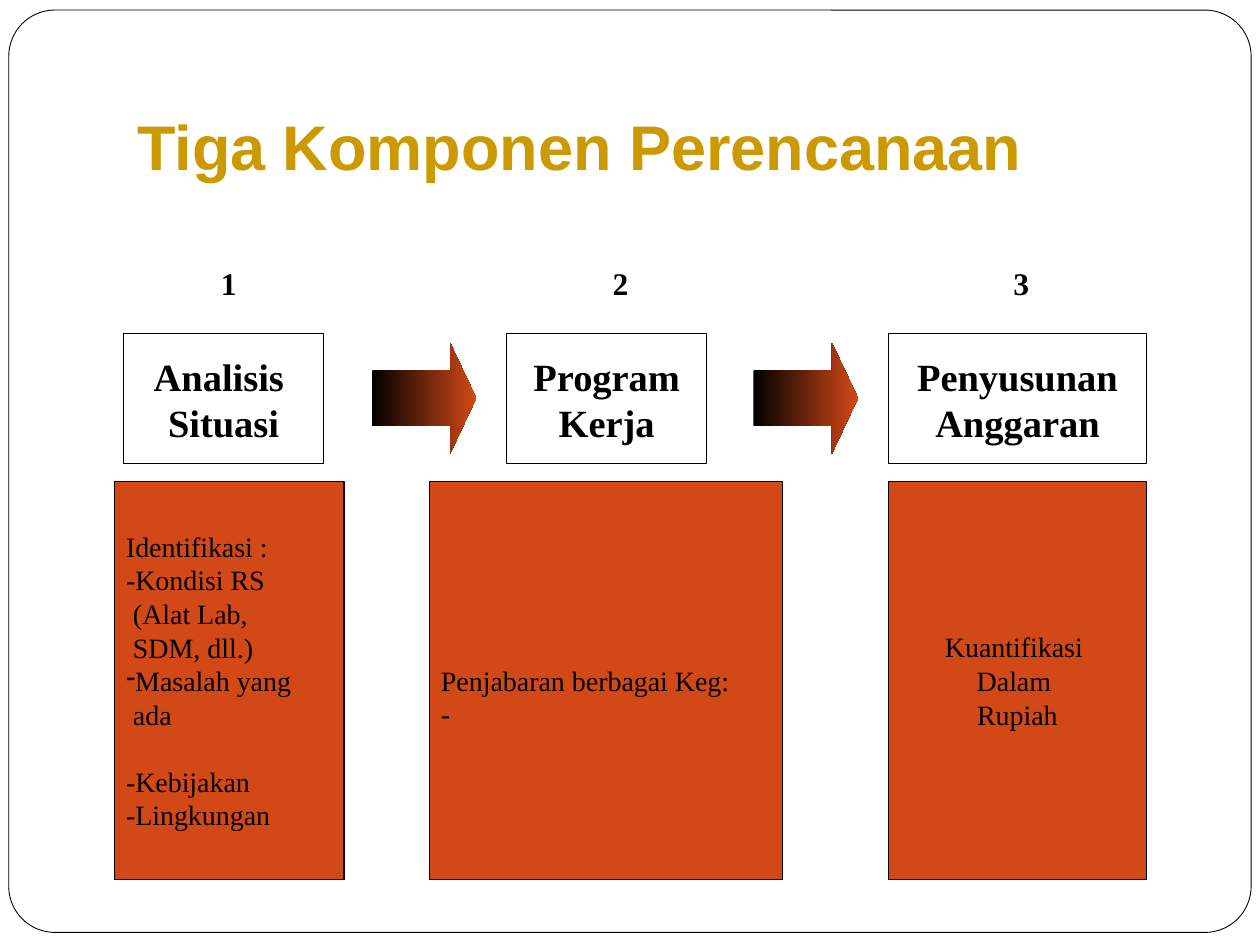
from lxml.etree import SubElement
from pptx import Presentation
from pptx.dml.color import RGBColor
from pptx.enum.shapes import MSO_SHAPE as Shape
from pptx.enum.text import MSO_ANCHOR as Anchor, PP_ALIGN as Align
from pptx.oxml.ns import qn
from pptx.util import Inches, Pt

BLACK, WHITE, RUST, GOLD = "000000", "FFFFFF", "D34817", "CC9900"
SERIF = "Times New Roman"


def rgb(code):
    """Turn a hex string into a colour."""
    return RGBColor.from_string(code)


def shape(slide, kind, box, fill=None, line=None):
    """Add a preset shape with a plain fill and outline."""
    item = slide.shapes.add_shape(kind, *map(Inches, box))
    item.shadow.inherit = False
    if fill:
        item.fill.solid()
        item.fill.fore_color.rgb = rgb(fill)
    else:
        item.fill.background()
    if line:
        item.line.color.rgb = rgb(BLACK)
        item.line.width = Pt(line)
    else:
        item.line.fill.background()
    return item


def write(item, lines, size, bold=False, align=Align.CENTER, font=SERIF,
          color=BLACK, anchor=Anchor.MIDDLE, top=0.04, low=0.04):
    """Write one paragraph for each line and return the paragraphs."""
    frame = item.text_frame
    frame.word_wrap = True
    frame.vertical_anchor = anchor
    frame.margin_left = frame.margin_right = Inches(0.09)
    frame.margin_top, frame.margin_bottom = Inches(top), Inches(low)
    for i, text in enumerate(lines):
        para = frame.add_paragraph() if i else frame.paragraphs[0]
        para.alignment = align
        run = para.add_run()
        run.text = text
        run.font.name, run.font.size, run.font.bold = font, Pt(size), bold
        run.font.color.rgb = rgb(color)
    return frame.paragraphs


def label(slide, box, lines, size, **style):
    """Add a text box holding bold lines."""
    item = slide.shapes.add_textbox(*map(Inches, box))
    write(item, lines, size, bold=True, **style)


def dash(para):
    """Give a paragraph a dash bullet."""
    props = para._p.get_or_add_pPr()
    props.set("marL", "0")
    props.set("indent", "0")
    SubElement(props, qn("a:buChar")).set("char", "-")


def head(slide, left, width, lines):
    """Add the outlined box that names a component."""
    item = shape(slide, Shape.RECTANGLE, (left, 2.65, width, 1.03), line=0.75)
    write(item, lines, 22, bold=True)


def detail(slide, left, width, lines, **style):
    """Add the filled box that describes a component."""
    box = (left, 3.82, width, 3.16)
    item = shape(slide, Shape.RECTANGLE, box, RUST, 0.75)
    return write(item, lines, 16, **style)


def arrow(slide, left):
    """Add a gradient arrow between two components."""
    item = shape(slide, Shape.RIGHT_ARROW, (left, 2.72, 0.83, 0.88))
    item.adjustments[0], item.adjustments[1] = 0.5, 0.25
    item.fill.gradient()
    item.fill.gradient_angle = 0
    for stop, place, code in zip(item.fill.gradient_stops, (0, 1), (BLACK, RUST)):
        stop.position = place
        stop.color.rgb = rgb(code)


def main():
    """Build and save the slide."""
    deck = Presentation()
    deck.slide_width, deck.slide_height = Inches(10), Inches(7.5)
    slide = deck.slides.add_slide(deck.slide_layouts[6])

    frame = shape(slide, Shape.ROUNDED_RECTANGLE, (0.07, 0.08, 9.86, 7.32), WHITE, 0.5)
    frame.adjustments[0] = 0.05
    label(slide, (1, 0.3, 8.5, 1.25), ["Tiga Komponen Perencanaan"], 36,
          align=Align.LEFT, font="Arial", color=GOLD, anchor=Anchor.BOTTOM, low=0.1)

    for num, left in enumerate((1.59, 4.7, 7.88), 1):
        label(slide, (left, 1.99, 0.45, 0.51), [str(num)], 18)

    head(slide, 0.98, 1.59, ["Analisis ", "Situasi"])
    head(slide, 4.02, 1.59, ["Program", "Kerja"])
    head(slide, 7.05, 2.05, ["Penyusunan", "Anggaran"])
    for left in (2.95, 5.98):
        arrow(slide, left)

    paras = detail(slide, 0.91, 1.82, [
        "Identifikasi :", "-Kondisi RS", " (Alat Lab,", " SDM, dll.)",
        "Masalah yang", " ada", "-Kebijakan", "-Lingkungan"], align=Align.LEFT)
    dash(paras[4])
    paras[6].space_before = Pt(19)
    detail(slide, 3.41, 2.8, ["Penjabaran berbagai Keg:", "-"],
           align=Align.LEFT, top=0.3)
    detail(slide, 7.05, 2.05, ["Kuantifikasi ", "Dalam ", "Rupiah"])

    deck.save("out.pptx")


if __name__ == "__main__":
    main()
